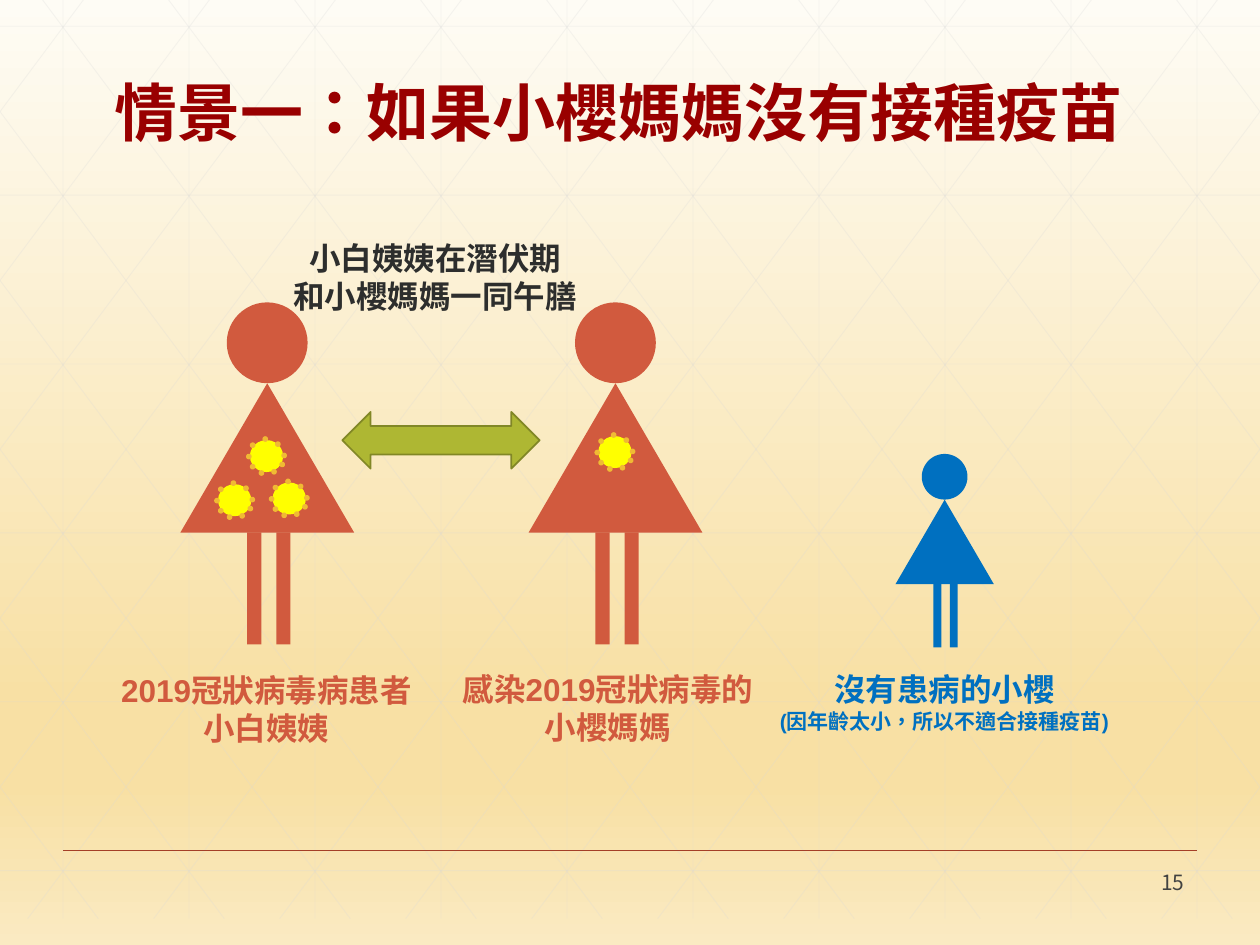
from lxml import etree
from pptx import Presentation
from pptx.dml.color import RGBColor
from pptx.enum import shapes as sh, text as tx
from pptx.oxml import ns
from pptx.util import Pt

HUES = {
    "grid": "D9D9D9", "rule": "A43F27", "adult": "D15A3E", "child": "0070C0",
    "arrow": "AEB733", "edge": "818726", "core": "FFFF00", "spike": "F0BA34",
    "title": "990000", "dark": "2D2E2D", "page": "424342",
}
FADE = [(0, "FEFCF5"), (74, "F8E0A4"), (83, "F8E0A4"), (100, "FAEAC2")]
SPIKES = [(9.4, 0), (16.6, 2.9), (0, 10), (2.2, 3.5), (2.2, 15.8),
          (20.2, 9.4), (19.1, 14.5), (14.4, 18.7), (7.2, 19.4)]
NOTO = "Noto Sans CJK TC"
KIND = sh.MSO_SHAPE
ALIGN = tx.PP_ALIGN


def rgb(name):
    """Return the named colour."""
    return RGBColor.from_string(HUES[name])


def sub(node, tag, **attrs):
    """Append a drawing element to a node."""
    return etree.SubElement(node, ns.qn(tag), **attrs)


def draw(host, kind, box, hue, edge=None):
    """Add a filled preset shape, outlined if an edge colour is given."""
    shape = host.shapes.add_shape(kind, *map(Pt, box))
    shape.shadow.inherit = False
    shape.fill.solid()
    shape.fill.fore_color.rgb = rgb(hue)
    if edge:
        shape.line.color.rgb = rgb(edge)
        shape.line.width = Pt(1)
    else:
        shape.line.fill.background()


def rule(host, ends, hue, width, alpha=None):
    """Add a straight line, partly clear if alpha is given."""
    line = host.shapes.add_connector(sh.MSO_CONNECTOR.STRAIGHT, *map(Pt, ends))
    line.line.color.rgb = rgb(hue)
    line.line.width = Pt(width)
    prop = line._element.spPr
    if alpha:
        tint = prop.find(".//" + ns.qn("a:srgbClr"))
        sub(tint, "a:alpha", val=str(alpha * 1000))
    sub(prop, "a:effectLst")


def backdrop(slide, wide):
    """Paint the gradient and the triangular grid."""
    fill = slide.background.fill
    fill.gradient()
    fill.gradient_angle = 270
    stops = slide._element.find(".//" + ns.qn("a:gsLst"))
    for stop in list(stops):
        stops.remove(stop)
    for pos, hue in FADE:
        sub(sub(stops, "a:gs", pos=str(pos * 1000)), "a:srgbClr", val=hue)
    top, tall, run = -15, 540, 403
    ends = [(36 + 72 * i, top, 36 + 72 * i, top + tall) for i in range(10)]
    ends += [(0, 15 + 96.5 * i, wide, 15 + 96.5 * i) for i in range(6)]
    for i in range(-5, 10):
        start = 13.2 + 72 * i
        left, right = max(start, 0), min(start + run, wide)
        high, low = (top + (x - start) * tall / run for x in (left, right))
        ends += [(left, high, right, low), (wide - left, high, wide - right, low)]
    grid = slide.shapes.add_group_shape()
    for line in ends:
        rule(grid, line, "grid", 0.5, 25)


def figure(slide, x, y, wide, hue):
    """Draw a person with head, dress and legs."""
    parts = [
        (KIND.FLOWCHART_CONNECTOR, (26.6, 0, 46.2, 46.2)),
        (KIND.ISOSCELES_TRIANGLE, (0, 46.2, 99.4, 85.4)),
        (KIND.RECTANGLE, (38.3, 131.4, 8.1, 64)),
        (KIND.RECTANGLE, (54.9, 131.4, 8.1, 64)),
    ]
    size = wide / 99.4
    group = slide.shapes.add_group_shape()
    for kind, (dx, dy, w, h) in parts:
        draw(group, kind, (x + dx * size, y + dy * size, w * size, h * size), hue)


def virus(slide, x, y):
    """Draw a virus as a core ringed with spikes."""
    group = slide.shapes.add_group_shape()
    dot = KIND.FLOWCHART_CONNECTOR
    draw(group, dot, (x + 2.2, y + 2.2, 18, 17.3), "core", "core")
    for dx, dy in SPIKES:
        draw(group, dot, (x + dx, y + dy, 2.2, 2.2), "spike", "spike")


def label(slide, box, lines, hue, font="Arial", bold=True,
          align=ALIGN.CENTER, anchor=tx.MSO_ANCHOR.TOP, space=None):
    """Add a text box from pairs of wording and size."""
    frame = slide.shapes.add_textbox(*map(Pt, box)).text_frame
    frame.word_wrap = True
    frame.vertical_anchor = anchor
    for i, (words, size) in enumerate(lines):
        para = frame.add_paragraph() if i else frame.paragraphs[0]
        para.alignment = align
        if space:
            para.line_spacing = space
        run = para.add_run()
        run.text = words
        run.font.name = font
        run.font.size = Pt(size)
        run.font.bold = bold
        run.font.color.rgb = rgb(hue)
        prop = run._r.get_or_add_rPr()
        prop.set("lang", "zh-TW")
        sub(prop, "a:ea", typeface=NOTO)


def scene(slide):
    """Place the people, the contact arrow, the viruses and the labels."""
    figure(slide, 103, 172.8, 99.4, "adult")
    figure(slide, 302, 172.8, 99.4, "adult")
    draw(slide, KIND.LEFT_RIGHT_ARROW, (195.6, 235.4, 112.8, 32.4), "arrow", "edge")
    for x, y in [(141.1, 249.8), (340.2, 247.5), (122.9, 275), (154.1, 274)]:
        virus(slide, x, y)
    figure(slide, 511.7, 259.4, 56.2, "child")
    label(slide, (61.2, 380, 182.2, 51),
          [("2019冠狀病毒病患者", 18), ("小白姨姨", 18)], "adult")
    label(slide, (159.8, 133.2, 177.8, 51),
          [("小白姨姨在潛伏期", 18), ("和小櫻媽媽一同午膳", 18)], "dark")
    label(slide, (419.8, 379.6, 239.8, 44),
          [("沒有患病的小櫻", 18), ("(因年齡太小，所以不適合接種疫苗)", 12)], "child")
    label(slide, (256.3, 379.6, 182.2, 51),
          [("感染2019冠狀病毒的", 18), ("小櫻媽媽", 18)], "adult")


def main():
    """Build and save the slide."""
    deck = Presentation()
    deck.slide_width, deck.slide_height = Pt(720), Pt(540)
    slide = deck.slides.add_slide(deck.slide_layouts[6])
    backdrop(slide, 720)
    rule(slide, (36, 486, 684, 486), "rule", 1)
    scene(slide)
    label(slide, (58.3, 36, 602.6, 53.3), [("情景一：如果小櫻媽媽沒有接種疫苗", 36)],
          "title", NOTO, align=ALIGN.LEFT, anchor=tx.MSO_ANCHOR.BOTTOM, space=0.9)
    label(slide, (630, 495.4, 54, 17.3), [("15", 12)], "page", NOTO, False,
          ALIGN.RIGHT, tx.MSO_ANCHOR.MIDDLE)
    deck.save("out.pptx")


if __name__ == "__main__":
    main()
